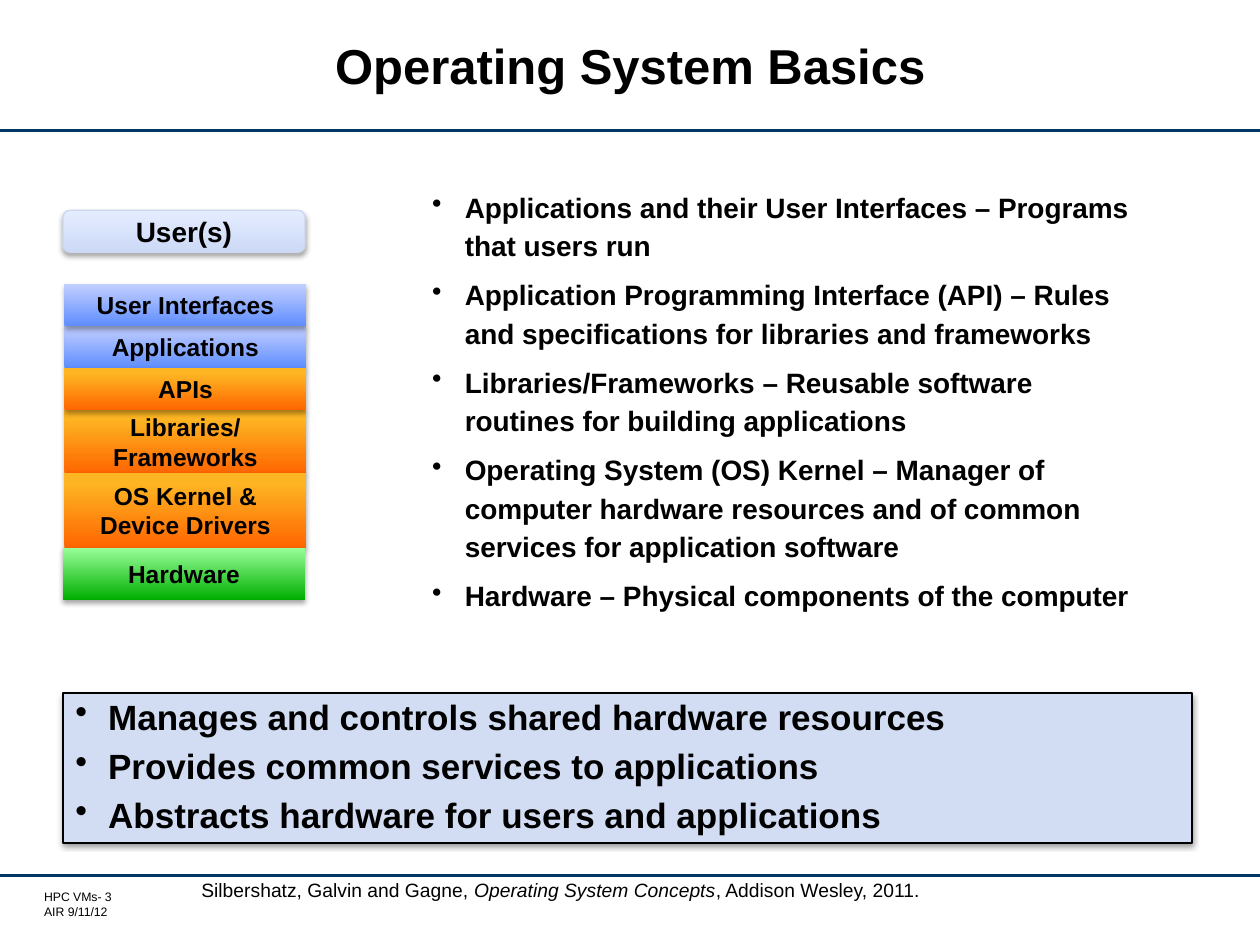
"""Build the Operating System Basics slide with its layer stack and definitions."""
from itertools import accumulate

from lxml.etree import SubElement
from pptx import Presentation
from pptx.dml.color import RGBColor
from pptx.enum.shapes import MSO_CONNECTOR, MSO_SHAPE
from pptx.enum.text import MSO_ANCHOR, PP_ALIGN
from pptx.oxml.ns import qn
from pptx.util import Cm, Pt

TITLE = "Operating System Basics"
DEFINITIONS = [
    "Applications and their User Interfaces – Programs that users run",
    "Application Programming Interface (API) – Rules and specifications for libraries and frameworks",
    "Libraries/Frameworks – Reusable software routines for building applications",
    "Operating System (OS) Kernel – Manager of computer hardware resources "
    "and of common services for application software",
    "Hardware – Physical components of the computer",
]
ROLES = [
    "Manages and controls shared hardware resources",
    "Provides common services to applications",
    "Abstracts hardware for users and applications",
]
FOOTER = ["HPC VMs- 3", "AIR 9/11/12"]
CITATION = [
    ("Silbershatz, Galvin and Gagne, ", False),
    ("Operating System Concepts", True),
    (", Addison Wesley, 2011.", False),
]
PALE = [("CDDAF7", 0), ("E4ECFF", 1)]
BLUE = [("5F8EFF", 0), ("C4D0FF", 1)]
ORANGE = [("FF6600", 0), ("FDB523", 0.87)]
GREEN = [("00AE00", 0), ("99FF99", 1)]
STACK_TOP = 5.72
LAYERS = [
    {"lines": ["User Interfaces"], "left": 1.3, "height": 0.85, "colors": BLUE, "depth": 4},
    {"lines": ["Applications"], "left": 1.3, "height": 0.85, "colors": BLUE, "depth": 1},
    {"lines": ["APIs"], "left": 1.3, "height": 0.85, "colors": ORANGE, "depth": 6},
    {"lines": ["Libraries/", "Frameworks"], "left": 1.3, "height": 1.27, "colors": ORANGE, "depth": 2},
    {"lines": ["OS Kernel & Device Drivers"], "left": 1.3, "height": 1.5, "colors": ORANGE, "depth": 3},
    {"lines": ["Hardware"], "left": 1.27, "height": 1.06, "colors": GREEN, "depth": 5},
]


def color(value):
    return RGBColor.from_string(value)


def box(lengths):
    return [Cm(length) for length in lengths]


def add_run(paragraph, text, size, bold=False, italic=False):
    run = paragraph.add_run()
    run.text = text
    run.font.name = "Arial"
    run.font.size = Pt(size)
    run.font.bold = bold
    run.font.italic = italic
    run.font.color.rgb = color("000000")


def add_paragraphs(frame, count):
    return [frame.paragraphs[0]] + [frame.add_paragraph() for _ in range(count - 1)]


def add_text_box(slide, lengths):
    frame = slide.shapes.add_textbox(*box(lengths)).text_frame
    frame.word_wrap = True
    return frame


def add_shadow(shape, distance, opacity):
    shape.shadow.inherit = False
    effects = shape._element.spPr.find(qn("a:effectLst"))
    shadow = SubElement(effects, qn("a:outerShdw"), blurRad=str(Pt(3.1)),
                        dist=str(Pt(distance)), dir="5400000", rotWithShape="0")
    black = SubElement(shadow, qn("a:srgbClr"), val="000000")
    SubElement(black, qn("a:alpha"), val=str(opacity * 1000))


def add_bullets(frame, items, size):
    for index, (paragraph, item) in enumerate(zip(add_paragraphs(frame, len(items)), items)):
        properties = paragraph._p.get_or_add_pPr()
        properties.set("marL", str(Cm(0.66)))
        properties.set("indent", str(-Cm(0.66)))
        SubElement(properties, qn("a:buChar"), char="•")
        paragraph.alignment = PP_ALIGN.LEFT
        paragraph.line_spacing = Pt(22)
        paragraph.space_before = Pt(6 if index else 0)
        add_run(paragraph, item, size, bold=True)


def add_rule(slide, top):
    rule = slide.shapes.add_connector(MSO_CONNECTOR.STRAIGHT, *box([0, top, 25.4, top]))
    rule.line.color.rgb = color("003767")
    rule.line.width = Pt(1.75)
    SubElement(rule._element.spPr, qn("a:effectLst"))


def add_block(slide, kind, lengths, colors, lines, size):
    shape = slide.shapes.add_shape(kind, *box(lengths))
    shape.fill.gradient()
    shape.fill.gradient_angle = 90
    for stop, (value, position) in zip(shape.fill.gradient_stops, colors):
        stop.color.rgb = color(value)
        stop.position = position
    shape.line.fill.background()
    add_shadow(shape, 1.8, 35)
    frame = shape.text_frame
    frame.word_wrap = True
    frame.vertical_anchor = MSO_ANCHOR.MIDDLE
    paragraph = frame.paragraphs[0]
    paragraph.alignment = PP_ALIGN.CENTER
    for index, line in enumerate(lines):
        if index:
            paragraph.add_line_break()
        add_run(paragraph, line, size, bold=True)
    return shape


def add_stack(slide):
    users = add_block(slide, MSO_SHAPE.ROUNDED_RECTANGLE, [1.27, 4.24, 4.88, 0.85],
                      PALE, ["User(s)"], 16)
    users.line.color.rgb = color("CDD7ED")
    users.line.width = Pt(0.75)
    tops = accumulate([layer["height"] for layer in LAYERS], initial=STACK_TOP)
    placed = sorted(zip(LAYERS, tops), key=lambda pair: pair[0]["depth"])
    for layer, top in placed:
        add_block(slide, MSO_SHAPE.RECTANGLE, [layer["left"], top, 4.88, layer["height"]],
                  layer["colors"], layer["lines"], 14)


def add_roles(slide):
    panel = slide.shapes.add_shape(MSO_SHAPE.RECTANGLE, *box([1.27, 13.97, 22.76, 3.02]))
    panel.fill.solid()
    panel.fill.fore_color.rgb = color("D2DCF2")
    panel.line.color.rgb = color("000000")
    panel.line.width = Pt(1)
    add_shadow(panel, 1.6, 38)
    panel.text_frame.word_wrap = True
    panel.text_frame.vertical_anchor = MSO_ANCHOR.TOP
    add_bullets(panel.text_frame, ROLES, 20)


def add_title(slide):
    frame = add_text_box(slide, [2.62, 0.28, 20.17, 2.26])
    frame.vertical_anchor = MSO_ANCHOR.MIDDLE
    paragraph = frame.paragraphs[0]
    paragraph.alignment = PP_ALIGN.CENTER
    paragraph.line_spacing = Pt(28)
    add_run(paragraph, TITLE, 28, bold=True)


def add_footer(slide):
    frame = add_text_box(slide, [0.89, 17.93, 3.02, 0.61])
    frame.margin_left = frame.margin_right = frame.margin_top = frame.margin_bottom = 0
    for paragraph, text in zip(add_paragraphs(frame, len(FOOTER)), FOOTER):
        add_run(paragraph, text, 7)


def main():
    presentation = Presentation()
    presentation.slide_width, presentation.slide_height = Cm(25.4), Cm(19.05)
    slide = presentation.slides.add_slide(presentation.slide_layouts[6])
    add_rule(slide, 2.64)
    add_footer(slide)
    add_rule(slide, 17.65)
    add_title(slide)
    add_bullets(add_text_box(slide, [8.46, 3.61, 14.81, 10.16]), DEFINITIONS, 16)
    add_roles(slide)
    add_stack(slide)
    citation = add_text_box(slide, [3.81, 17.58, 15.04, 0.74]).paragraphs[0]
    for text, italic in CITATION:
        add_run(citation, text, 11, italic=italic)
    presentation.save("out.pptx")


if __name__ == "__main__":
    main()
